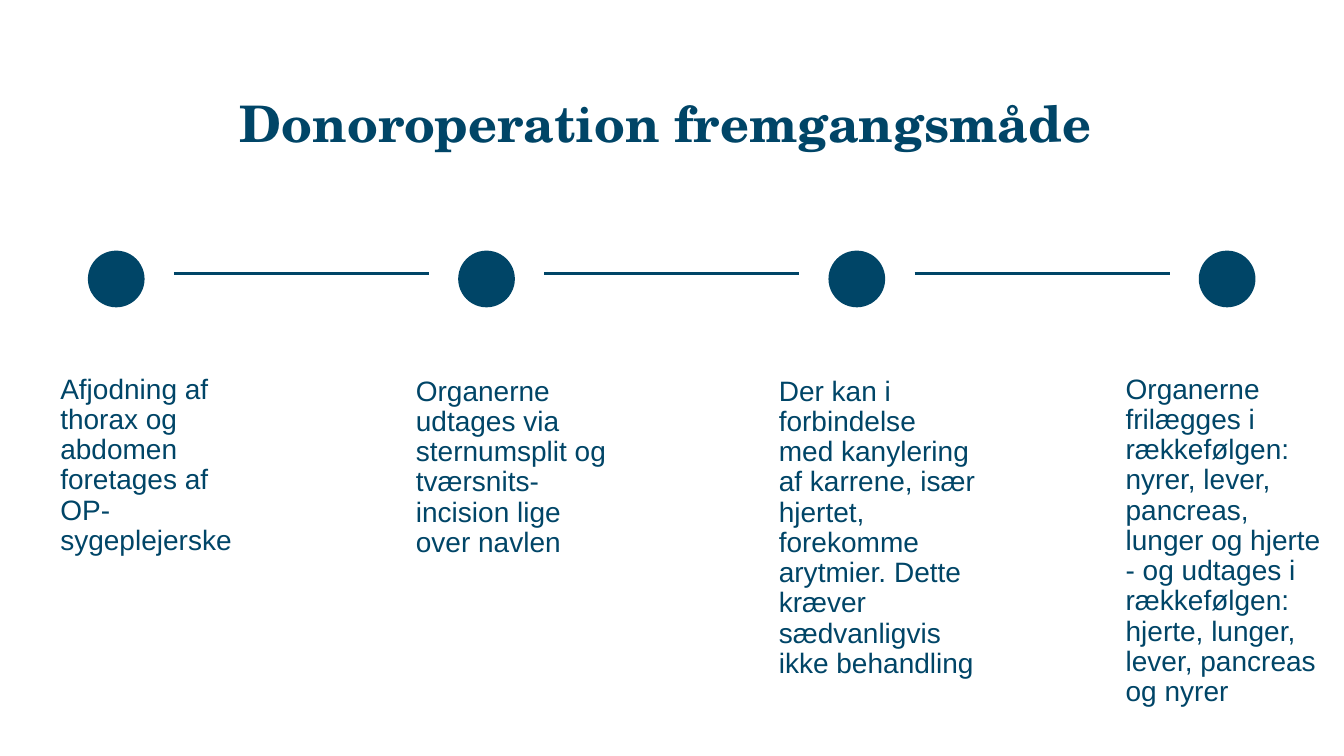
import dataclasses

import pptx
import pptx.dml.color
import pptx.enum.shapes
import pptx.enum.text
import pptx.oxml
import pptx.util

Pt = pptx.util.Pt


@dataclasses.dataclass(frozen=True)
class Theme:
    ink: pptx.dml.color.RGBColor = pptx.dml.color.RGBColor(0x00, 0x45, 0x67)
    title_font: str = "TeX Gyre Schola"
    body_font: str = "Arial"
    title_size: int = 36
    body_size: int = 20
    line_width: float = 2.25


class TimelineSlide:
    def __init__(self, deck, theme):
        self.theme = theme
        self.slide = deck.slides.add_slide(deck.slide_layouts[5])
        self.shapes = self.slide.shapes

    def style(self, paragraph, font_name, size, bold=False):
        font = paragraph.font
        font.name = font_name
        font.size = Pt(size)
        font.bold = bold
        font.color.rgb = self.theme.ink

    def title(self, wording, left, top, width, height):
        heading = self.shapes.title
        heading.left, heading.top = Pt(left), Pt(top)
        heading.width, heading.height = Pt(width), Pt(height)
        frame = heading.text_frame
        frame.text = wording
        frame.word_wrap = True
        frame.auto_size = pptx.enum.text.MSO_AUTO_SIZE.SHAPE_TO_FIT_TEXT
        frame.vertical_anchor = pptx.enum.text.MSO_ANCHOR.TOP
        paragraph = frame.paragraphs[0]
        paragraph.alignment = pptx.enum.text.PP_ALIGN.CENTER
        self.style(paragraph, self.theme.title_font, self.theme.title_size, bold=True)

    def dot(self, left, top, size):
        marker = self.shapes.add_shape(
            pptx.enum.shapes.MSO_SHAPE.OVAL, Pt(left), Pt(top), Pt(size), Pt(size))
        marker.shadow.inherit = False
        marker.fill.solid()
        marker.fill.fore_color.rgb = self.theme.ink
        marker.line.fill.background()

    def link(self, left, y, length):
        stretch = self.shapes.add_connector(
            pptx.enum.shapes.MSO_CONNECTOR.STRAIGHT,
            Pt(left), Pt(y), Pt(left + length), Pt(y))
        stretch.line.color.rgb = self.theme.ink
        stretch.line.width = Pt(self.theme.line_width)
        properties = stretch._element.spPr
        properties.append(pptx.oxml.parse_xml(
            '<a:effectLst xmlns:a="http://schemas.openxmlformats.org/drawingml/2006/main"/>'))

    def text(self, wording, left, top, width, height):
        frame = self.shapes.add_textbox(
            Pt(left), Pt(top), Pt(width), Pt(height)).text_frame
        frame.word_wrap = True
        frame.text = wording
        paragraph = frame.paragraphs[0]
        paragraph.line_spacing = 0.9
        self.style(paragraph, self.theme.body_font, self.theme.body_size)


# Steps: left and top of the description, then its wording
STEPS = [
    (36, 264.25, "Afjodning af thorax og abdomen foretages af OP-sygeplejerske"),
    (290, 265.75, "Organerne udtages via sternumsplit og tværsnits-incision lige over navlen"),
    (549.25, 265.75, "Der kan i forbindelse med kanylering af karrene, især hjertet, "
     "forekomme arytmier. Dette kræver sædvanligvis ikke behandling"),
    (797, 264.25, "Organerne frilægges i rækkefølgen: nyrer, lever, pancreas, lunger og "
     "hjerte - og udtages i rækkefølgen: hjerte, lunger, lever, pancreas og nyrer"),
]
FIRST_DOT, DOT_PITCH, DOT_TOP, DOT_SIZE = 62.75, 264.5, 179, 40.5
LINK_OFFSET, LINK_Y, LINK_LENGTH = 61.5, 195.5, 182.25


def main():
    deck = pptx.Presentation()
    deck.slide_width, deck.slide_height = Pt(960), Pt(540)
    procedure = TimelineSlide(deck, Theme())

    # Heading
    procedure.title("Donoroperation fremgangsmåde", 66.25, 62, 818.5, 51)

    # Timeline with one description under each dot
    for index, (left, top, description) in enumerate(STEPS):
        dot_left = FIRST_DOT + index * DOT_PITCH
        procedure.dot(dot_left, DOT_TOP, DOT_SIZE)
        if index < len(STEPS) - 1:
            procedure.link(dot_left + LINK_OFFSET, LINK_Y, LINK_LENGTH)
        procedure.text(description, left, top, 156.25, 238.25)

    deck.save("out.pptx")


if __name__ == "__main__":
    main()
